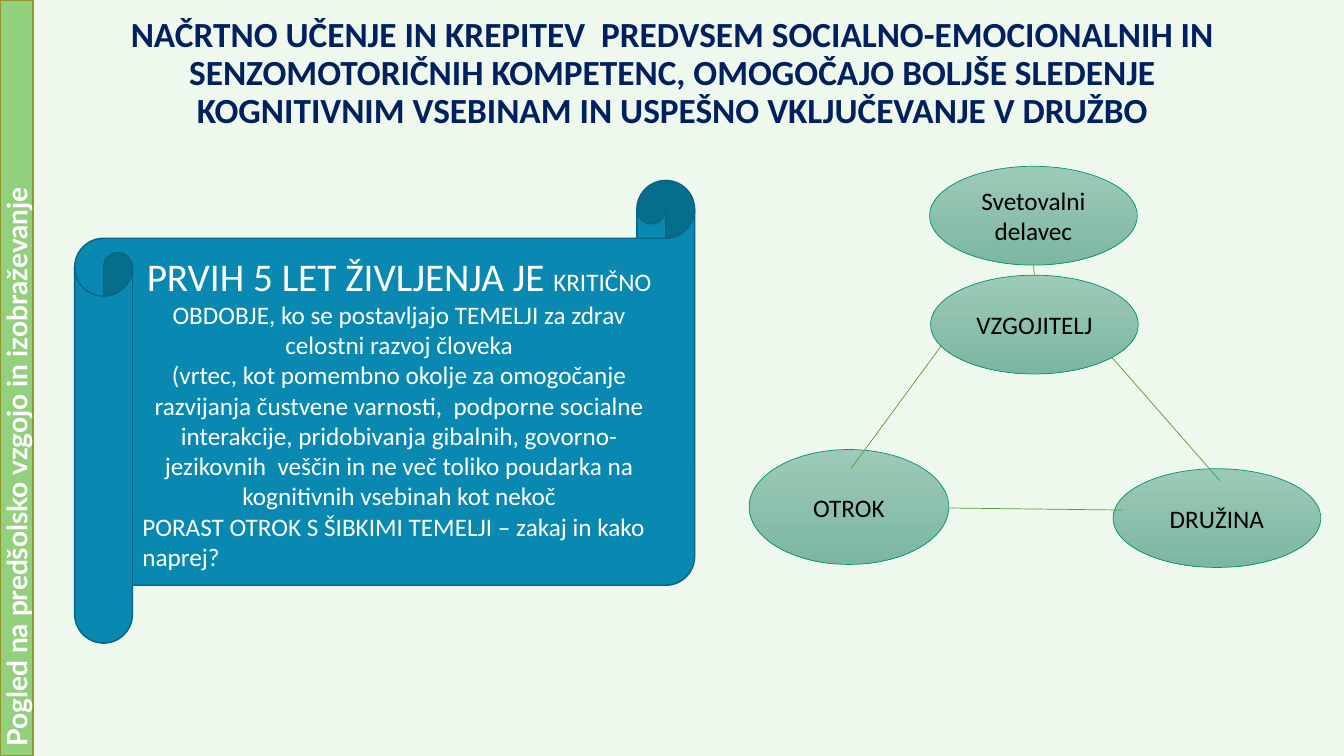
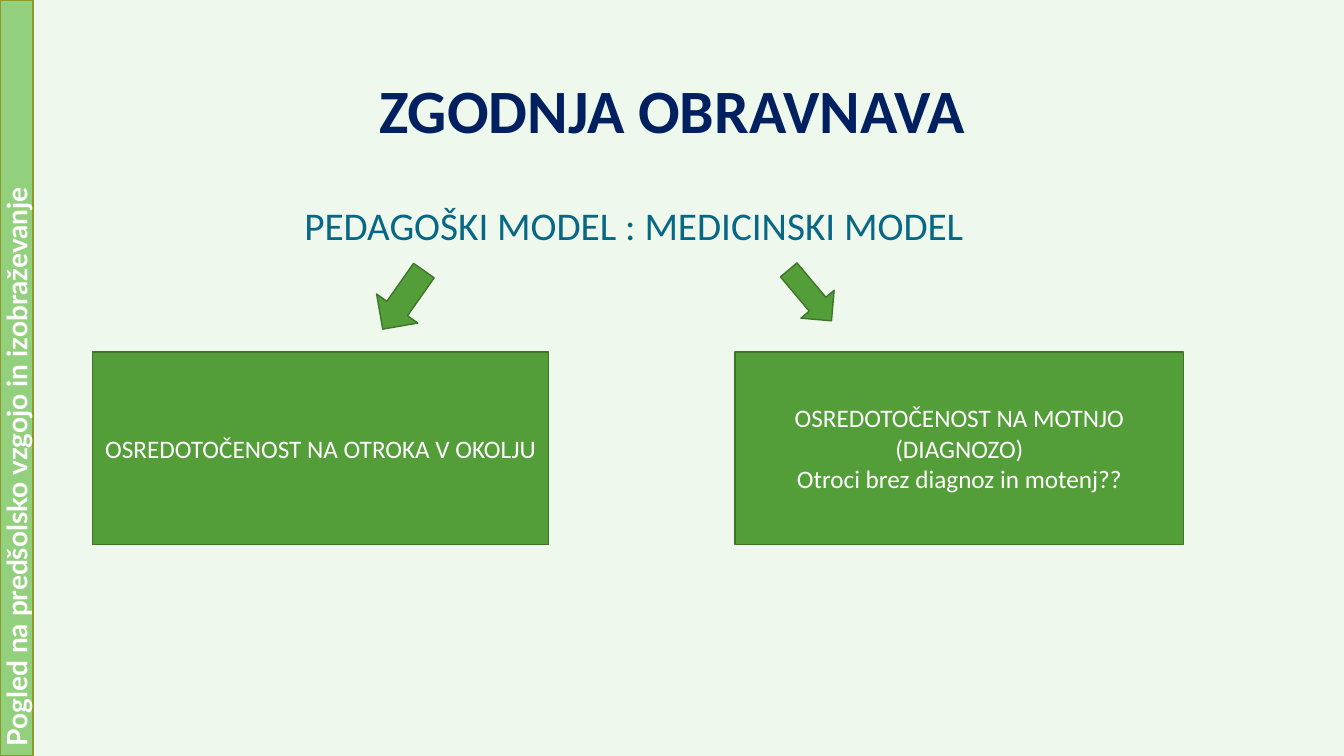
from lxml.etree import SubElement
from pptx import Presentation
from pptx.dml.color import RGBColor
from pptx.enum.shapes import MSO_CONNECTOR, MSO_SHAPE
from pptx.enum.text import MSO_ANCHOR, PP_ALIGN
from pptx.oxml.ns import qn
from pptx.util import Inches, Pt

COLORS = {
    "page": "EFF8EC", "band": "93D07D", "edge": "8E992B",
    "title": "002060", "head": "076785",
    "scroll": "0989B1", "rim": "076583",
    "top": "9DCAB8", "base": "7CB7A1", "ring": "029676",
    "green": "549E39", "dark": "3E752A",
    "white": "FFFFFF", "black": "000000",
}
FONT = "Calibri"


def color(name):
    return RGBColor.from_string(COLORS[name])


def style(run, size, ink, bold=False, font=FONT):
    run.font.size = Pt(size)
    run.font.name = font
    run.font.bold = bold
    run.font.color.rgb = color(ink)


def write(shape, text, size, ink, align=PP_ALIGN.CENTER, bold=False, font=FONT):
    """Fill a shape with text, one paragraph for each line."""
    frame = shape.text_frame
    frame.word_wrap = True
    frame.vertical_anchor = MSO_ANCHOR.MIDDLE
    frame.text = text
    for para in frame.paragraphs:
        para.alignment = align
        for run in para.runs:
            style(run, size, ink, bold, font)


def add_text(slide, box, text, size, ink, **look):
    shape = slide.shapes.add_textbox(*map(Inches, box))
    write(shape, text, size, ink, **look)
    return shape


def add_shape(slide, kind, box, fill, line, width=1, turn=0):
    shape = slide.shapes.add_shape(kind, *map(Inches, box))
    shape.shadow.inherit = False
    shape.fill.solid()
    shape.fill.fore_color.rgb = color(fill)
    shape.line.color.rgb = color(line)
    shape.line.width = Pt(width)
    shape.rotation = turn
    return shape


def add_oval(slide, box, text):
    oval = add_shape(slide, MSO_SHAPE.OVAL, box, "base", "ring", 0.5)
    oval.fill.gradient()
    oval.fill.gradient_angle = 270
    for stop, name in zip(oval.fill.gradient_stops, ("top", "base")):
        stop.color.rgb = color(name)
    write(oval, text, 18, "black")


def add_link(slide, *ends):
    link = slide.shapes.add_connector(MSO_CONNECTOR.STRAIGHT, *map(Inches, ends))
    link.line.color.rgb = color("green")
    link.line.width = Pt(0.5)
    SubElement(link.element.spPr, qn("a:effectLst"))


def add_slide(deck, title, top, height, size):
    """Add a slide with the shared page colour, side band and title."""
    slide = deck.slides.add_slide(deck.slide_layouts[6])
    slide.background.fill.solid()
    slide.background.fill.fore_color.rgb = color("page")
    add_shape(slide, MSO_SHAPE.RECTANGLE, (0, 0, 0.33, 7.5), "band", "edge")
    side = add_text(slide, (-0.11, 0, 0.54, 7.5),
                    "Pogled na predšolsko vzgojo in izobraževanje", 20, "white",
                    align=PP_ALIGN.LEFT, bold=True, font="Lato")
    side.text_frame._txBody.bodyPr.set("vert", "vert270")
    head = add_text(slide, (0.92, top, 11.5, height), title, size, "title", bold=True)
    head.text_frame.paragraphs[0].line_spacing = 0.9
    return slide


def add_scroll(slide):
    scroll = add_shape(slide, MSO_SHAPE.HORIZONTAL_SCROLL,
                       (0.74, 1.79, 6.15, 4.59), "scroll", "rim")
    write(scroll, "\n".join((
        "PRVIH 5 LET ŽIVLJENJA JE ",
        "(vrtec, kot pomembno okolje za omogočanje razvijanja čustvene varnosti,  "
        "podporne socialne interakcije, pridobivanja gibalnih, govorno-jezikovnih  "
        "veščin in ne več toliko poudarka na kognitivnih vsebinah kot nekoč",
        "PORAST OTROK S ŠIBKIMI TEMELJI – zakaj in kako naprej?",
    )), 18, "white")
    paras = scroll.text_frame.paragraphs
    paras[0].runs[0].font.size = Pt(28)
    rest = paras[0].add_run()
    rest.text = ("KRITIČNO OBDOBJE, ko se postavljajo TEMELJI "
                 "za zdrav celostni razvoj človeka")
    style(rest, 18, "white")
    paras[-1].alignment = PP_ALIGN.LEFT


def add_skills(deck):
    slide = add_slide(
        deck, "NAČRTNO UČENJE IN KREPITEV  PREDVSEM SOCIALNO-EMOCIONALNIH IN "
        "SENZOMOTORIČNIH KOMPETENC, OMOGOČAJO BOLJŠE SLEDENJE KOGNITIVNIM "
        "VSEBINAM IN USPEŠNO VKLJUČEVANJE V DRUŽBO", 0.14, 1.19, 25.2)
    add_scroll(slide)
    add_oval(slide, (7.43, 4.46, 1.98, 1.14), "OTROK")
    add_oval(slide, (9.22, 1.65, 2.06, 0.98), "Svetovalni delavec")
    add_oval(slide, (11.04, 4.65, 2.06, 0.98), "DRUŽINA")
    add_link(slide, 9.38, 3.37, 8.44, 4.65)
    add_link(slide, 12.1, 4.77, 10.91, 3.41)
    add_link(slide, 9.41, 5.04, 11.13, 5.06)
    add_oval(slide, (9.23, 2.73, 2.06, 0.98), "VZGOJITELJ")
    add_link(slide, 10.25, 2.63, 10.26, 2.73)


def add_models(deck):
    slide = add_slide(deck, "ZGODNJA OBRAVNAVA", 0.4, 1.45, 44)
    head = add_text(slide, (2.92, 2, 9.5, 0.52),
                    "PEDAGOŠKI MODEL : MEDICINSKI MODEL", 28, "head",
                    align=PP_ALIGN.LEFT)
    head.text_frame.vertical_anchor = MSO_ANCHOR.TOP
    head.text_frame.paragraphs[0].line_spacing = 0.9
    for left, width, text in (
        (0.92, 4.52, "OSREDOTOČENOST NA OTROKA V OKOLJU"),
        (7.29, 4.45, "OSREDOTOČENOST NA MOTNJO (DIAGNOZO)\n"
                     "Otroci brez diagnoz in motenj??"),
    ):
        card = add_shape(slide, MSO_SHAPE.RECTANGLE, (left, 3.49, width, 1.91),
                         "green", "dark")
        write(card, text, 18, "white")
    for box, turn in (((3.75, 2.62, 0.5, 0.71), 35.1), ((7.82, 2.6, 0.43, 0.66), 320)):
        add_shape(slide, MSO_SHAPE.DOWN_ARROW, box, "green", "dark", turn=turn)


def main():
    deck = Presentation()
    deck.slide_width = Inches(13.33)
    deck.slide_height = Inches(7.5)
    add_skills(deck)
    add_models(deck)
    deck.save("out.pptx")


if __name__ == "__main__":
    main()
